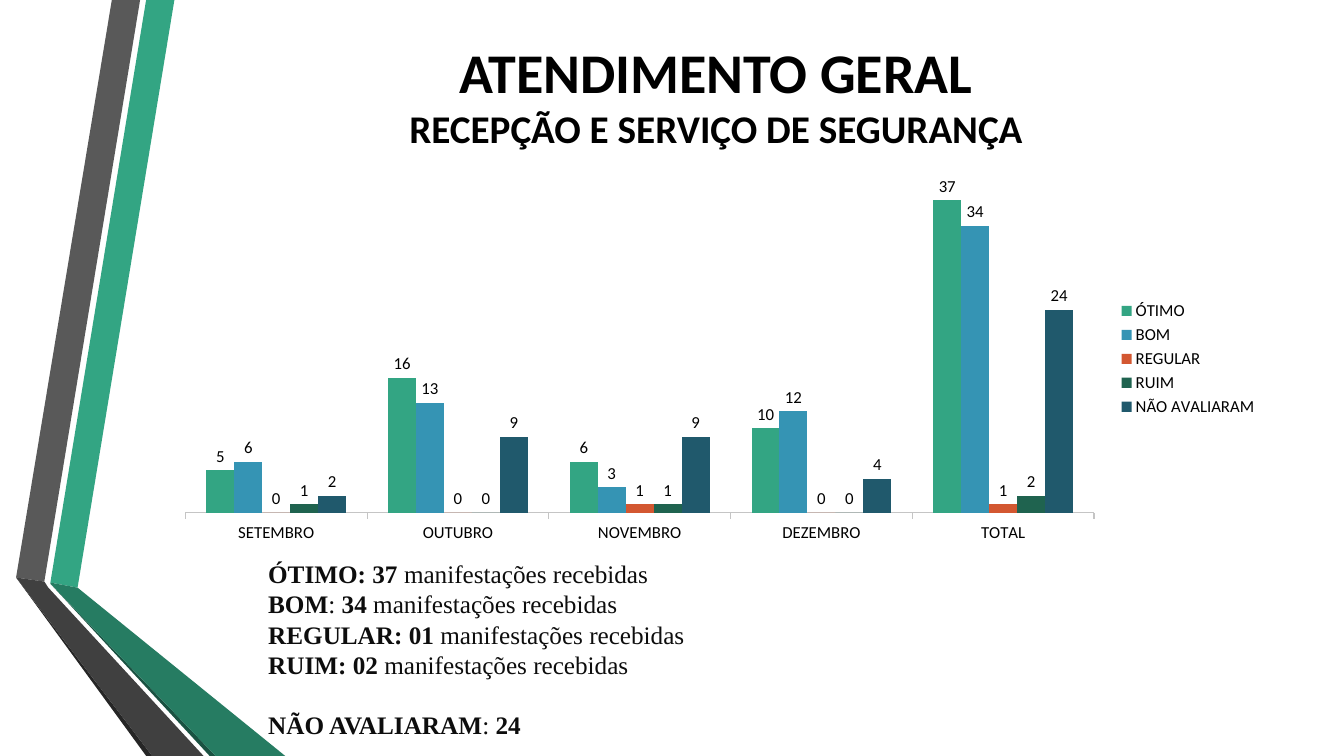
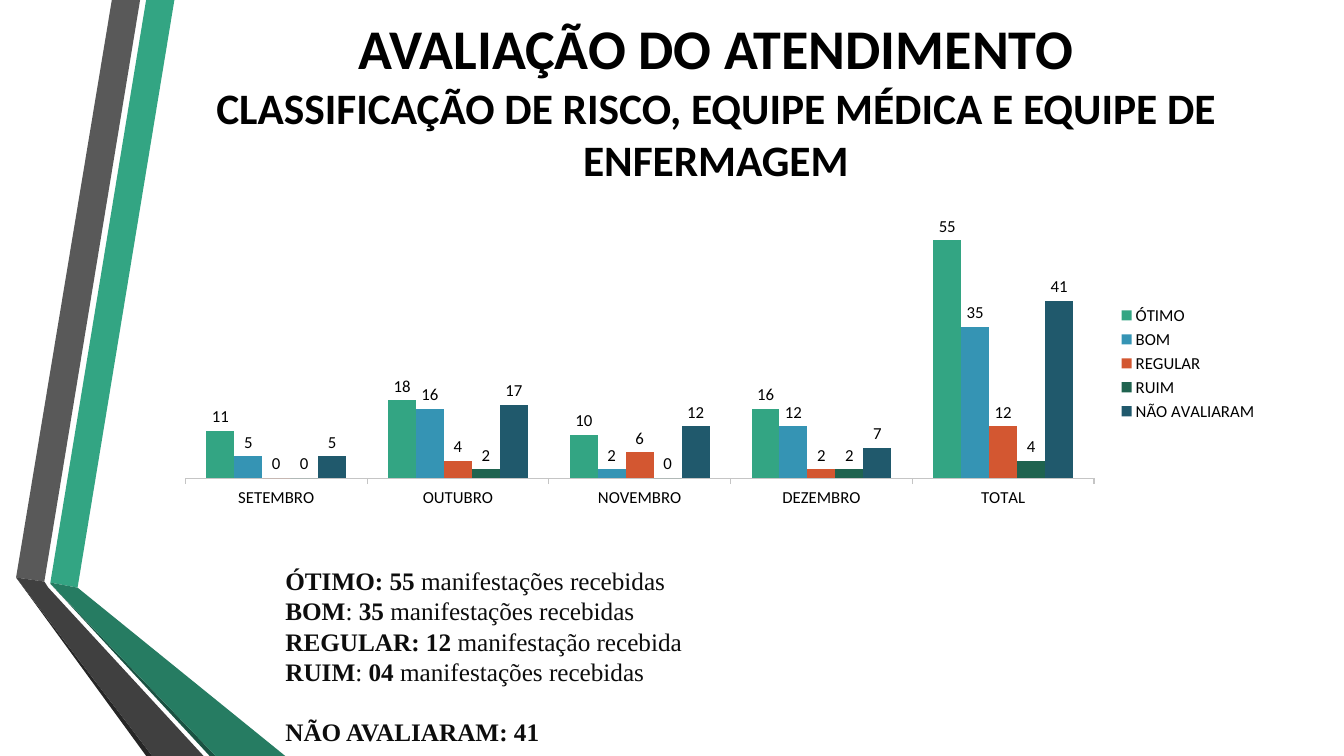
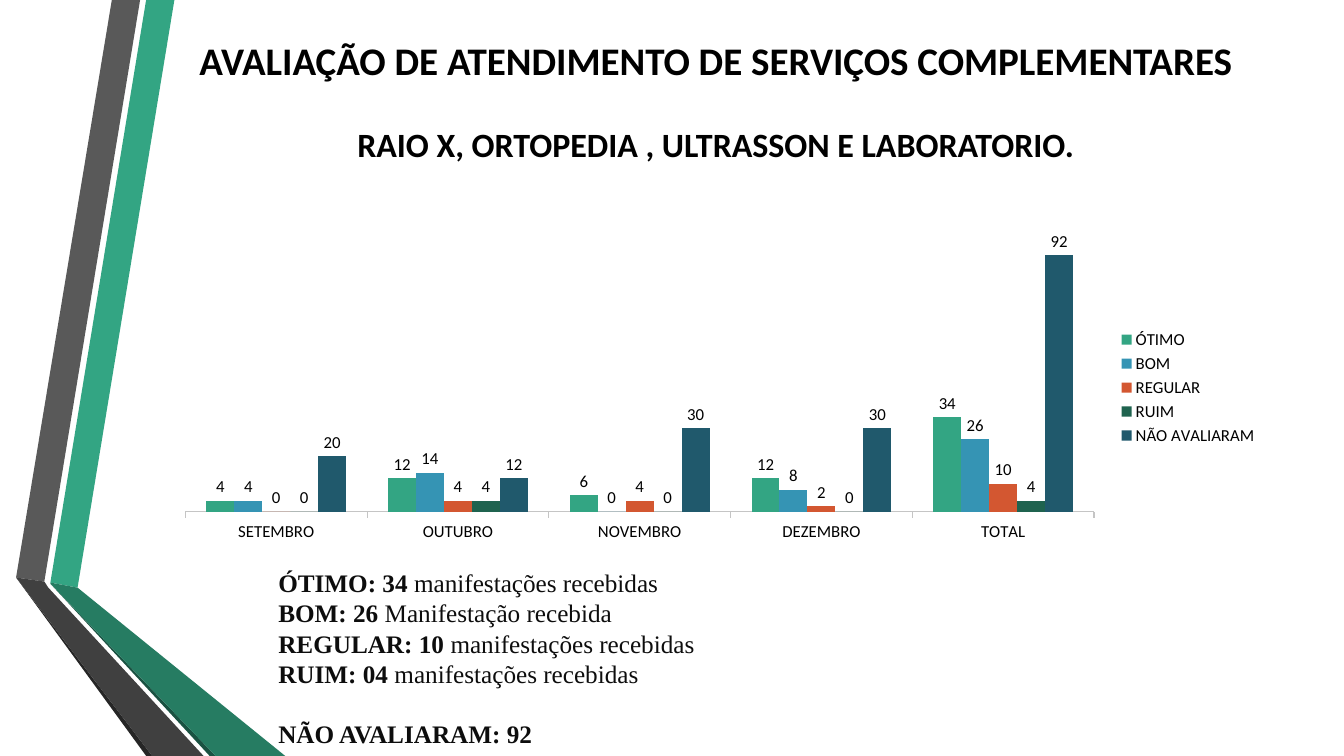
import pptx
import pptx.util
import pptx.chart.data
import pptx.dml.color
import pptx.enum.chart
import pptx.enum.text
import pptx.oxml.ns
import lxml.etree

Inches = pptx.util.Inches
Pt = pptx.util.Pt
RGBColor = pptx.dml.color.RGBColor

# Shared colours and fonts
BLACK = RGBColor(0x00, 0x00, 0x00)
NOTE_COLOR = RGBColor(0x0D, 0x0D, 0x0D)
AXIS_COLOR = RGBColor(0xC5, 0xC5, 0xC5)
GREEN = RGBColor(0x33, 0xA5, 0x83)
BLUE = RGBColor(0x35, 0x94, 0xB4)
ORANGE = RGBColor(0xD3, 0x57, 0x31)
DARK_GREEN = RGBColor(0x1F, 0x63, 0x4F)
DARK_BLUE = RGBColor(0x20, 0x59, 0x6C)
HEADING_FONT = "Calibri"
NOTE_FONT = "Times New Roman"

# Shared geometry, in inches
CONTENT_LEFT, CONTENT_WIDTH = 1.62, 10.96
CONTENT_RIGHT = CONTENT_LEFT + CONTENT_WIDTH
NOTE_HEIGHT = 1.92
NOTE_LINE = 21.6  # points

# Folded bands at the left edge: colour and corners
BANDS = [
    (GREEN, [(0.5, 5.78), (0.77, 5.83), (1.73, 0), (1.45, 0)]),
    (RGBColor(0x59, 0x59, 0x59), [(1.39, 0), (1.11, 0), (0.16, 5.73), (0.44, 5.77)]),
    (RGBColor(0x26, 0x26, 0x26), [(0.16, 5.73), (1.45, 7.5), (1.51, 7.5)]),
    (RGBColor(0x1A, 0x52, 0x42), [(0.5, 5.79), (2.08, 7.5), (2.14, 7.5)]),
    (RGBColor(0x26, 0x7C, 0x62),
     [(0.5, 5.78), (0.5, 5.79), (2.14, 7.5), (2.83, 7.5), (0.77, 5.83)]),
    (RGBColor(0x40, 0x40, 0x40),
     [(2.02, 7.5), (0.48, 5.83), (0.44, 5.77), (0.16, 5.73), (1.51, 7.5)]),
]

CATEGORIES = ["SETEMBRO", "OUTUBRO", "NOVEMBRO", "DEZEMBRO", "TOTAL"]
RATINGS = [("ÓTIMO", GREEN), ("BOM", BLUE), ("REGULAR", ORANGE),
           ("RUIM", DARK_GREEN), ("NÃO AVALIARAM", DARK_BLUE)]
RECEIVED = "manifestações recebidas"

# Content: title lines are (text, size); note runs alternate bold and regular
SLIDES = [
    {
        "title": [("ATENDIMENTO GERAL", 40), ("RECEPÇÃO E SERVIÇO DE SEGURANÇA", 28)],
        "title_gap": 0, "title_box": (0.21, 1.45),
        "chart_box": (1.66, 3.8), "axis_maximum": 40,
        "values": [(5, 16, 6, 10, 37), (6, 13, 3, 12, 34), (0, 0, 1, 0, 1),
                   (1, 0, 1, 0, 2), (2, 9, 9, 4, 24)],
        "note_corner": (2.56, 5.49),
        "notes": [("ÓTIMO: 37 ", RECEIVED), ("BOM", ": ", "34 ", RECEIVED),
                  ("REGULAR: 01 ", RECEIVED), ("RUIM: 02 ", RECEIVED),
                  ("NÃO AVALIARAM", ": ", "24")],
    },
    {
        "title": [("AVALIAÇÃO DO ATENDIMENTO", 40),
                  ("CLASSIFICAÇÃO DE RISCO, EQUIPE MÉDICA E EQUIPE DE ENFERMAGEM", 31)],
        "title_gap": 0, "title_box": (0, 1.97),
        "chart_box": (2.11, 2.99), "axis_maximum": 60,
        "values": [(11, 18, 10, 16, 55), (5, 16, 2, 12, 35), (0, 4, 6, 2, 12),
                   (0, 2, 0, 2, 4), (5, 17, 12, 7, 41)],
        "note_corner": (2.73, 5.56),
        "notes": [("ÓTIMO: 55 ", RECEIVED), ("BOM", ": ", "35 ", RECEIVED),
                  ("REGULAR: 12 ", "manifestação recebida"),
                  ("RUIM", ": ", "04 ", RECEIVED), ("NÃO AVALIARAM: 41",)],
    },
    {
        "title": [("AVALIAÇÃO DE ATENDIMENTO DE SERVIÇOS COMPLEMENTARES", 27.9),
                  ("RAIO X, ORTOPEDIA , ULTRASSON E LABORATORIO.", 24.3)],
        "title_gap": 28.8, "title_box": (0, 2),
        "chart_box": (2.25, 3.19), "axis_maximum": 100,
        "values": [(4, 12, 6, 12, 34), (4, 14, 0, 8, 26), (0, 4, 4, 2, 10),
                   (0, 4, 0, 0, 4), (20, 12, 30, 30, 92)],
        "note_corner": (2.66, 5.58),
        "notes": [("ÓTIMO: 34 ", RECEIVED), ("BOM: 26 ", "Manifestação recebida"),
                  ("REGULAR: 10 ", RECEIVED), ("RUIM: 04 ", RECEIVED),
                  ("NÃO AVALIARAM: 92",)],
    },
]


def format_font(font, name, size, color, bold=None):
    font.name, font.size, font.bold = name, Pt(size), bold
    font.color.rgb = color


def place(shape, left, top, width, height):
    shape.left, shape.top = Inches(left), Inches(top)
    shape.width, shape.height = Inches(width), Inches(height)


def add_paragraphs(frame, count):
    """Return the given number of paragraphs of an empty text frame."""
    return [frame.paragraphs[0]] + [frame.add_paragraph() for _ in range(count - 1)]


def move_bands_to_layout(slide, layout):
    """Draw the bands and put them behind everything on the layout."""
    for position, (color, corners) in enumerate(BANDS):
        points = [(Inches(x), Inches(y)) for x, y in corners]
        builder = slide.shapes.build_freeform(*points[0])
        builder.add_line_segments(points[1:], close=True)
        band = builder.convert_to_shape()
        band.shadow.inherit = False
        band.fill.solid()
        band.fill.fore_color.rgb = color
        band.line.fill.background()
        layout.shapes.element.insert(2 + position, band.element)


def fill_title(title, content):
    top, height = content["title_box"]
    place(title, CONTENT_LEFT, top, CONTENT_WIDTH, height)
    frame = title.text_frame
    frame.auto_size = pptx.enum.text.MSO_AUTO_SIZE.NONE
    frame.vertical_anchor = pptx.enum.text.MSO_ANCHOR.MIDDLE
    paragraphs = add_paragraphs(frame, len(content["title"]))
    for paragraph, (text, size) in zip(paragraphs, content["title"]):
        paragraph.text = text
        paragraph.alignment = pptx.enum.text.PP_ALIGN.CENTER
        paragraph.space_before = Pt(0)
        format_font(paragraph.font, HEADING_FONT, size, BLACK, True)
    paragraphs[-1].space_before = Pt(content["title_gap"])


def fill_notes(body, content):
    left, top = content["note_corner"]
    place(body, left, top, CONTENT_RIGHT - left, NOTE_HEIGHT)
    frame = body.text_frame
    frame.auto_size = pptx.enum.text.MSO_AUTO_SIZE.NONE
    frame.vertical_anchor = pptx.enum.text.MSO_ANCHOR.TOP
    paragraphs = add_paragraphs(frame, len(content["notes"]))
    for paragraph, texts in zip(paragraphs, content["notes"]):
        paragraph.line_spacing = Pt(NOTE_LINE)
        is_last = paragraph is paragraphs[-1]
        paragraph.space_before = Pt(NOTE_LINE if is_last else 0)
        # No bullet and no hanging indent
        properties = paragraph._p.get_or_add_pPr()
        properties.set("marL", "0")
        properties.set("indent", "0")
        lxml.etree.SubElement(properties, pptx.oxml.ns.qn("a:buNone"))
        format_font(paragraph.font, NOTE_FONT, 18, NOTE_COLOR)
        for index, text in enumerate(texts):
            run = paragraph.add_run()
            run.text = text
            run.font.bold = index % 2 == 0


def add_rating_chart(slide, content):
    data = pptx.chart.data.CategoryChartData()
    data.categories = CATEGORIES
    for (name, _), values in zip(RATINGS, content["values"]):
        data.add_series(name, values)
    top, height = content["chart_box"]
    chart = slide.shapes.add_chart(
        pptx.enum.chart.XL_CHART_TYPE.COLUMN_CLUSTERED, Inches(CONTENT_LEFT),
        Inches(top), Inches(CONTENT_WIDTH), Inches(height), data).chart
    format_font(chart.font, HEADING_FONT, 12, BLACK)
    chart.has_title = False
    chart.has_legend = True
    chart.legend.position = pptx.enum.chart.XL_LEGEND_POSITION.RIGHT
    chart.legend.include_in_layout = False

    # Axes
    value_axis = chart.value_axis
    value_axis.visible = False
    value_axis.has_major_gridlines = False
    value_axis.minimum_scale = 0
    value_axis.maximum_scale = content["axis_maximum"]
    category_axis = chart.category_axis
    category_axis.major_tick_mark = pptx.enum.chart.XL_TICK_MARK.OUTSIDE
    category_axis.format.line.color.rgb = AXIS_COLOR
    category_axis.format.line.width = Pt(0.75)

    # Columns and their labels
    plot = chart.plots[0]
    plot.gap_width = 150
    plot.overlap = 0
    plot.vary_by_categories = False
    for series, (_, color) in zip(plot.series, RATINGS):
        series.format.fill.solid()
        series.format.fill.fore_color.rgb = color
        labels = series.data_labels
        labels.show_value = True
        labels.position = pptx.enum.chart.XL_LABEL_POSITION.OUTSIDE_END
        format_font(labels.font, HEADING_FONT, 12, BLACK)


def main():
    presentation = pptx.Presentation()
    presentation.slide_width = Inches(13.33)
    presentation.slide_height = Inches(7.5)
    layout = presentation.slide_layouts.get_by_name("Title and Content")
    for index, content in enumerate(SLIDES):
        slide = presentation.slides.add_slide(layout)
        if index == 0:
            move_bands_to_layout(slide, layout)
        fill_title(slide.shapes.title, content)
        fill_notes(slide.placeholders[1], content)
        add_rating_chart(slide, content)
    presentation.save("out.pptx")


if __name__ == "__main__":
    main()
